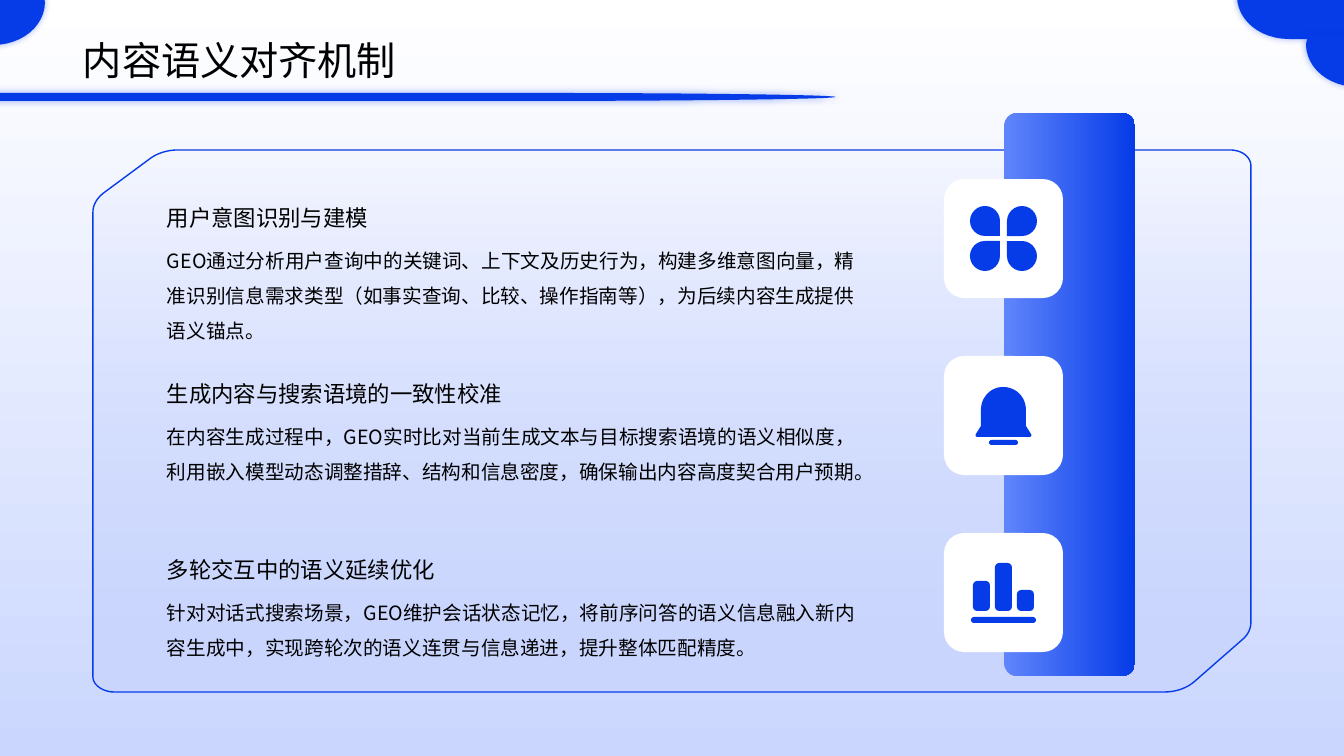
from lxml import etree
from pptx import Presentation
from pptx.dml.color import RGBColor
from pptx.enum.shapes import MSO_SHAPE
from pptx.enum.text import MSO_ANCHOR, MSO_AUTO_SIZE, PP_ALIGN
from pptx.oxml.ns import qn
from pptx.util import Pt

PX = 12192000 / 1344
FONT = "Noto Sans CJK SC"
COLORS = {name: RGBColor.from_string(value) for name, value in {
    "blue": "063CE8", "sky": "6085FB", "pale": "CAD6FE",
    "white": "FFFFFF", "text": "000000"}.items()}
ROUND = MSO_SHAPE.ROUNDED_RECTANGLE
TEARDROP = MSO_SHAPE.TEAR
TOP, MIDDLE, BOTTOM = MSO_ANCHOR.TOP, MSO_ANCHOR.MIDDLE, MSO_ANCHOR.BOTTOM
CURVE_STEPS = 12

prs = Presentation()
prs.slide_width, prs.slide_height = round(1344 * PX), round(756 * PX)
slide = prs.slides.add_slide(prs.slide_layouts[5])
shapes = slide.shapes


def draw_outline(start, *segments):
    """Closed outline: two numbers are a line end, six a Bezier curve."""
    points = [start]
    for segment in segments:
        if len(segment) == 2:
            points.append(segment)
            continue
        corners = [points[-1], segment[:2], segment[2:4], segment[4:]]
        for step in range(1, CURVE_STEPS + 1):
            t = step / CURVE_STEPS
            weights = ((1 - t) ** 3, 3 * t * (1 - t) ** 2, 3 * t * t * (1 - t), t ** 3)
            points.append(tuple(sum(w * c[axis] for w, c in zip(weights, corners))
                                for axis in (0, 1)))
    scaled = [(x * PX, y * PX) for x, y in points]
    builder = shapes.build_freeform(*scaled[0])
    builder.add_line_segments(scaled[1:], close=True)
    outline = builder.convert_to_shape()
    outline.fill.solid()
    outline.fill.fore_color.rgb = COLORS["blue"]
    outline.line.fill.background()
    outline.shadow.inherit = False
    return outline


def write(box, place, text, size, spacing, anchor):
    box.left, box.top, box.width, box.height = [round(n * PX) for n in place]
    frame = box.text_frame
    frame.text = text
    frame.word_wrap = True
    frame.auto_size = MSO_AUTO_SIZE.NONE
    frame.vertical_anchor = anchor
    frame.margin_left = frame.margin_right = frame.margin_top = frame.margin_bottom = 0
    paragraph = frame.paragraphs[0]
    paragraph.alignment = PP_ALIGN.LEFT
    paragraph.line_spacing = spacing
    run = paragraph.runs[0]
    run.font.size = Pt(size)
    run.font.color.rgb = COLORS["text"]
    run.font.name = FONT
    etree.SubElement(run._r.get_or_add_rPr(), qn("a:ea"), typeface=FONT)


# Title
write(shapes.title, (83, 23, 849, 60), "内容语义对齐机制", 28, 1.3, MIDDLE)

# Content panel with two cut corners
panel = draw_outline(
    (178, 150), (1230, 150), (1242, 150, 1251, 157, 1251, 166),
    (1251, 622), (1251, 629, 1248, 635, 1242, 640),
    (1194, 682), (1187, 688, 1176, 692, 1165, 692),
    (114, 692), (103, 692, 93, 685, 93, 677),
    (93, 212), (93, 204, 98, 197, 105, 192),
    (151, 158), (158, 153, 168, 150, 178, 150))
panel.line.color.rgb = COLORS["blue"]
panel.line.width = Pt(1)

# Mechanisms
mechanisms = [
    ("用户意图识别与建模",
     "GEO通过分析用户查询中的关键词、上下文及历史行为，构建多维意图向量，"
     "精准识别信息需求类型（如事实查询、比较、操作指南等），为后续内容生成提供语义锚点。"),
    ("生成内容与搜索语境的一致性校准",
     "在内容生成过程中，GEO实时比对当前生成文本与目标搜索语境的语义相似度，"
     "利用嵌入模型动态调整措辞、结构和信息密度，确保输出内容高度契合用户预期。"),
    ("多轮交互中的语义延续优化",
     "针对对话式搜索场景，GEO维护会话状态记忆，将前序问答的语义信息融入新内容生成中，"
     "实现跨轮次的语义连贯与信息递进，提升整体匹配精度。"),
]
for row, (heading, detail) in enumerate(mechanisms):
    top = 164 + 176 * row
    write(shapes.add_textbox(0, 0, 0, 0), (167, top, 706, 67), heading, 16, 1.3, BOTTOM)
    write(shapes.add_textbox(0, 0, 0, 0), (167, top + 73, 706, 94), detail, 14, 1.5, TOP)

# Column, cards and icon parts: kind, place, corner, rotation, colour
parts = [(ROUND, (1004, 113, 131, 563), 0.1, 0, "blue")]
parts += [(ROUND, (944, 179 + 177 * row, 119, 119), 0.17, 0, "white") for row in range(3)]
parts += [(TEARDROP, (x, y, 30, 30), 1, turn, "blue") for x, y, turn in
          [(970, 206, 90), (1007, 206, 180), (970, 241, 0), (1007, 241, 270)]]
parts += [(ROUND, (989, 440, 29, 5), 0.5, 0, "blue"),
          (ROUND, (971, 617, 65, 6), 0.5, 0, "blue")]
parts += [(ROUND, (x, 611 - height, 17, height), 0.25, 0, "blue")
          for x, height in [(973, 30), (995, 48), (1017, 21)]]
drawn = []
for kind, place, corner, turn, color in parts:
    part = shapes.add_shape(kind, *[round(n * PX) for n in place])
    part.adjustments[0] = corner
    part.rotation = turn
    part.fill.solid()
    part.fill.fore_color.rgb = COLORS[color]
    part.line.fill.background()
    part.shadow.inherit = False
    drawn.append(part)
column = drawn[0]

# Bell
draw_outline(
    (981, 410), (981, 397, 991, 387, 1003, 387), (1016, 387, 1026, 397, 1026, 410),
    (1026, 426), (1031, 434), (1032, 436, 1031, 437, 1029, 437),
    (978, 437), (976, 437, 975, 436, 976, 434), (981, 426))

# Title underline and corner blobs, each with a soft glow
glowing = [draw_outline(
    (-9, 93), (522, 93), (696, 93, 836, 95, 836, 97),
    (836, 99, 696, 101, 522, 101), (-9, 101))]
for x, y, side in [(1237, -12, 1), (45, -6, -1), (1306, 36, 1)]:
    glowing.append(draw_outline(
        (x + 2 * side, y), (x + 108 * side, y), (x + 108 * side, y + 51),
        (x + 52 * side, y + 51),
        (x + 23 * side, y + 51, x, y + 32, x, y + 8)))
for ornament in glowing:
    effects = ornament._element.spPr.find(qn("a:effectLst"))
    glow = etree.SubElement(effects, qn("a:outerShdw"), blurRad=str(Pt(5)),
                            dist="0", dir="0", algn="ctr", rotWithShape="0")
    tint = etree.SubElement(glow, qn("a:srgbClr"), val=str(COLORS["blue"]))
    etree.SubElement(tint, qn("a:alpha"), val="40000")

# Gradients
for fill, first, last, angle in [(slide.background.fill, "white", "pale", 270),
                                 (panel.fill, "pale", "pale", 270),
                                 (column.fill, "sky", "blue", 0)]:
    fill.gradient()
    fill.gradient_angle = angle
    for stop, color, position in zip(fill.gradient_stops, (first, last), (0, 1)):
        stop.color.rgb = COLORS[color]
        stop.position = position
clear_tint = panel._element.spPr.find(".//" + qn("a:srgbClr"))
etree.SubElement(clear_tint, qn("a:alpha"), val="0")

prs.save("out.pptx")
